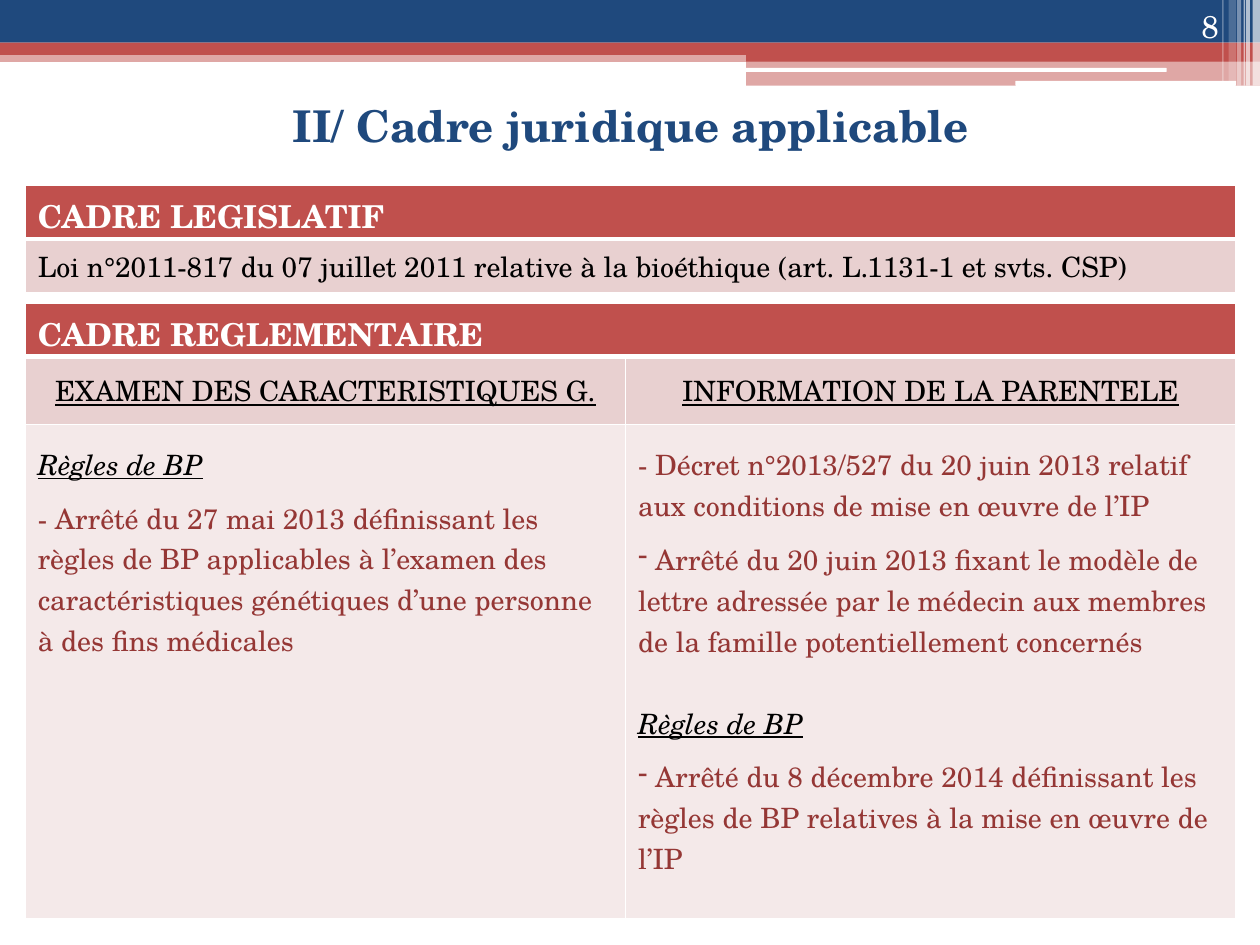
from dataclasses import dataclass
from lxml.etree import SubElement as Sub
from pptx import Presentation
from pptx.dml.color import RGBColor as Rgb
from pptx.enum.shapes import MSO_SHAPE as Shape
from pptx.enum.text import MSO_ANCHOR as Anchor, PP_ALIGN as Align
from pptx.oxml.ns import qn
from pptx.util import Cm, Pt


@dataclass(frozen=True)
class Theme:
    font: str = "TeX Gyre Schola"
    navy: str = "1F497D"
    red: str = "C0504D"
    wine: str = "953735"
    rose: str = "E8D0D0"
    pale: str = "F4E9E9"
    white: str = "FFFFFF"
    black: str = "000000"
    title: int = 25
    head: int = 18
    body: int = 16


T = Theme()
BARS = [
    (0, 1.02, 25.4, 0.23, T.red, 50),
    (0, 0, 25.4, 0.86, T.navy, 100),
    (0, 0.86, 25.4, 0.25, T.red, 100),
    (15.04, 0.99, 10.36, 0.25, T.red, 100),
    (15.04, 1.22, 10.36, 0.51, T.red, 50),
]
PILLS = [(15.01, 1.37, 8.51, 0.08), (20.47, 1.63, 4.45, 0.1)]
STRIPES = [
    (25.25, 0.15, 1.73, 65), (25.12, 0.08, 1.73, 65), (25.07, 0.03, 1.73, 60),
    (24.94, 0.08, 1.73, 40), (24.77, 0.15, 1.63, 20), (24.64, 0.03, 1.63, 30),
]

HEAD = dict(size=T.head, color=T.white, bold=True, anchor=Anchor.MIDDLE)
TOPIC = dict(align=Align.CENTER, under=True, anchor=Anchor.MIDDLE)
RULE = dict(italic=True, under=True)
ITEM = dict(color=T.wine)
GAP, WIDE = 7.3, 23.4

LAW = [[(T.red, [("CADRE LEGISLATIF", HEAD)])],
       [(T.rose, [("Loi n°2011-817 du 07 juillet 2011 relative à la bioéthique "
                   "(art. L.1131-1 et svts. CSP)", {})])]]
LEFT = [
    ("Règles de BP", RULE),
    ("- Arrêté du 27 mai 2013 définissant les règles de BP applicables à l’examen des "
     "caractéristiques génétiques d’une personne à des fins médicales", dict(ITEM, gap=GAP)),
]
RIGHT = [
    ("- Décret n°2013/527 du 20 juin 2013 relatif aux conditions de mise en œuvre de l’IP", ITEM),
    (" Arrêté du 20 juin 2013 fixant le modèle de lettre adressée par le médecin aux membres "
     "de la famille potentiellement concernés", dict(ITEM, gap=GAP, mark="-")),
    ("Règles de BP", dict(RULE, gap=WIDE)),
    (" Arrêté du 8 décembre 2014 définissant les règles de BP relatives à la mise en œuvre "
     "de l’IP", dict(ITEM, gap=GAP, mark="-")),
]
ORDERS = [
    [(T.red, [("CADRE REGLEMENTAIRE", HEAD)])],
    [(T.rose, [("EXAMEN DES CARACTERISTIQUES G.", TOPIC)]),
     (T.rose, [("INFORMATION DE LA PARENTELE", TOPIC)])],
    [(T.pale, LEFT), (T.pale, RIGHT)],
]


def write(frame, text, first=True, size=T.body, color=T.black, bold=False, italic=False,
          under=False, align=Align.LEFT, anchor=Anchor.TOP, gap=0, mark=None):
    para = frame.paragraphs[0] if first else frame.add_paragraph()
    para.alignment, para.space_before = align, Pt(gap)
    if mark:
        props = para._p.get_or_add_pPr()
        props.set("marL", "0")
        props.set("indent", "0")
        Sub(props, qn("a:buFontTx"))
        Sub(props, qn("a:buChar")).set("char", mark)
    run = para.add_run()
    run.text = text
    font = run.font
    font.name, font.size, font.bold = T.font, Pt(size), bold
    font.italic, font.underline = italic, under
    font.color.rgb = Rgb.from_string(color)
    if first:
        frame.vertical_anchor = anchor


def label(slide, box, text, **form):
    frame = slide.shapes.add_textbox(*map(Cm, box)).text_frame
    frame.word_wrap = True
    write(frame, text, **form)


def block(slide, box, color, alpha=100, kind=Shape.RECTANGLE):
    shape = slide.shapes.add_shape(kind, *map(Cm, box))
    shape.shadow.inherit = False
    shape.line.fill.background()
    shape.fill.solid()
    shape.fill.fore_color.rgb = Rgb.from_string(color)
    if alpha < 100:
        tint = shape._element.spPr.find(".//" + qn("a:srgbClr"))
        Sub(tint, qn("a:alpha")).set("val", str(alpha * 1000))


def edge(cell, row):
    props = cell._tc.get_or_add_tcPr()
    for side in "LRTB":
        thick = (row, side) in ((0, "B"), (1, "T"))
        line = Sub(props, qn("a:ln" + side), w=str(Pt(3 if thick else 1)))
        fill = Sub(line, qn("a:solidFill"))
        Sub(fill, qn("a:srgbClr")).set("val", T.white)


def grid(slide, left, top, cols, rows, data):
    table = slide.shapes.add_table(len(rows), len(cols), Cm(left), Cm(top),
                                   Cm(sum(cols)), Cm(sum(rows))).table
    table.first_row = table.horz_banding = False
    for col, width in zip(table.columns, cols):
        col.width = Cm(width)
    for row, high in zip(table.rows, rows):
        row.height = Cm(high)
    if len(cols) > 1:
        table.cell(0, 0).merge(table.cell(0, len(cols) - 1))
    for r, line in enumerate(data):
        for c in range(len(cols)):
            cell = table.cell(r, c)
            color, paras = line[min(c, len(line) - 1)]
            edge(cell, r)
            cell.fill.solid()
            cell.fill.fore_color.rgb = Rgb.from_string(color)
            if cell.is_spanned:
                continue
            if len(paras) > 1:
                cell.margin_top = Cm(0.39)
            for n, (text, form) in enumerate(paras):
                anchor = form.get("anchor", Anchor.TOP)
                write(cell.text_frame, text, first=n == 0, **form)
                cell.vertical_anchor = anchor


def main():
    """Build the slide on the applicable legal framework."""
    deck = Presentation()
    deck.slide_width, deck.slide_height = Cm(25.4), Cm(19.05)
    slide = deck.slides.add_slide(deck.slide_layouts[6])
    for *box, color, alpha in BARS:
        block(slide, box, color, alpha)
    for box in PILLS:
        block(slide, box, T.white, kind=Shape.ROUNDED_RECTANGLE)
    for left, width, high, alpha in STRIPES:
        block(slide, (left, 0, width, high), T.white, alpha)
    label(slide, (0.71, 1.52, 24, 2.01), "II/ Cadre juridique applicable", size=T.title,
          color=T.navy, bold=True, align=Align.CENTER, anchor=Anchor.MIDDLE)
    grid(slide, 0.51, 3.73, [24.4], [1.09, 1.09], LAW)
    label(slide, (22.71, 0, 2.11, 1.02), "8", size=T.head, color=T.white,
          align=Align.RIGHT, anchor=Anchor.BOTTOM)
    grid(slide, 0.51, 6.12, [12.1, 12.3], [1.07, 1.37, 9.96], ORDERS)
    deck.save("out.pptx")


if __name__ == "__main__":
    main()
